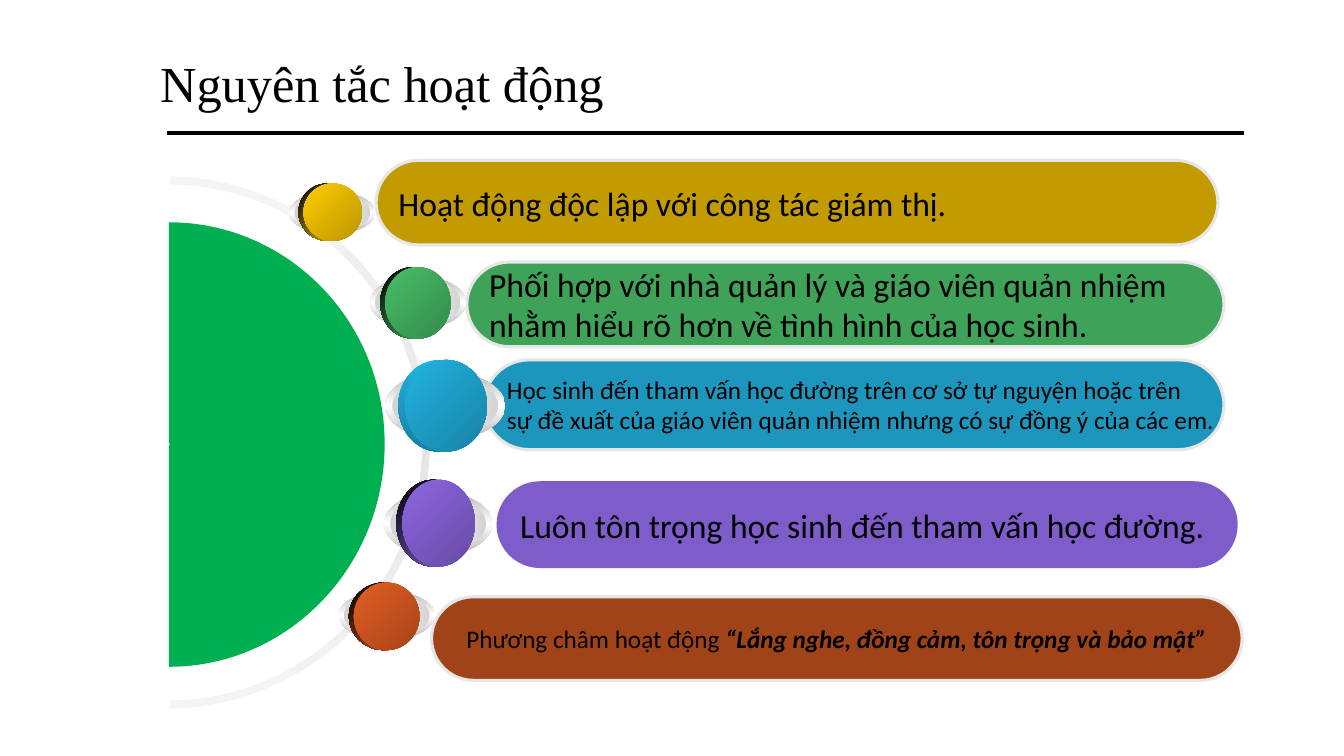
from dataclasses import dataclass

import pptx
import pptx.dml.color
import pptx.enum.shapes
import pptx.enum.text
import pptx.oxml
import pptx.oxml.ns
import pptx.util

EMU_PER_PX = 9144  # 100 px to the inch
NAMESPACE = pptx.oxml.ns.nsdecls("a")
SHAPE = pptx.enum.shapes.MSO_SHAPE
ALIGN = pptx.enum.text.PP_ALIGN
COLOURS = {
    "text": "000000", "edge": "E7E6E6", "disc": "00B050", "arc": "F4F4F4", "white": "FFFFFF",
    "gold": "C29B00", "green": "3EA358", "blue": "1C96BC",
    "purple": "7E5CC9", "rust": "A14319",
    "gold_light": "FFCC00", "green_light": "48BE67", "blue_light": "21B3E1",
    "purple_light": "8D67E1", "rust_light": "E35E23",
}


@dataclass(frozen=True)
class Box:
    left: int
    top: int
    width: int
    height: int


@dataclass(frozen=True)
class Stop:
    colour: str
    shade: int = 100


@dataclass(frozen=True)
class Outline:
    """Shape turned by 90 degrees; each step holds 1 point for a line, 3 for a curve."""
    box: Box
    start: tuple[int, int]
    steps: tuple[tuple[tuple[int, int], ...], ...]
    stops: tuple[Stop, ...]


@dataclass(frozen=True)
class Bar:
    box: Box
    colour: str
    lines: tuple[str, ...]
    size: int = 24
    edge: str = "edge"
    motto: str = ""


@dataclass(frozen=True)
class Ball:
    ring: Box
    top: int
    height: int
    back_width: int
    face_width: int
    colour: str
    back: tuple[Stop, ...] = ()
    back_angle: int = 45


OUTLINES = (
    Outline(Box(-98, 178, 528, 522), (8, 258), (
        ((10, 119), (124, 8), (264, 8)), ((404, 8), (518, 119), (520, 258)),
        ((528, 258),),
        ((525, 115), (408, 1), (264, 1)), ((120, 1), (2, 115), (0, 258)),
    ), (Stop("arc"), Stop("edge"), Stop("arc"))),
    Outline(Box(-54, 226, 441, 430), (222, 214), (
        ((222, 214), (221, 213), (220, 213)), ((220, 213), (219, 214), (219, 214)),
        ((0, 214),),
        ((0, 96), (98, 0), (220, 0)), ((342, 0), (441, 96), (441, 214)),
    ), (Stop("disc"),)),
)
BARS = (
    Bar(Box(428, 592, 804, 83), "rust", ("Phương châm hoạt động ",), size=18,
        motto="“Lắng nghe, đồng cảm, tôn trọng và bảo mật”"),
    Bar(Box(480, 357, 734, 89), "blue",
        ("Học sinh đến tham vấn học đường trên cơ sở tự nguyện hoặc trên",
         "sự đề xuất của giáo viên quản nhiệm nhưng có sự đồng ý của các em."), size=18),
    Bar(Box(463, 260, 751, 84), "green",
        ("Phối hợp với nhà quản lý và giáo viên quản nhiệm",
         "nhằm hiểu rõ hơn về tình hình của học sinh.")),
    Bar(Box(373, 159, 835, 84), "gold", ("Hoạt động độc lập với công tác giám thị.",)),
)
FRONT_BAR = Bar(Box(494, 479, 732, 83), "purple",
                ("Luôn tôn trọng học sinh đến tham vấn học đường.",), edge="purple")
BALLS = (
    Ball(Box(287, 190, 85, 42), 182, 57, 58, 58, "gold"),
    Ball(Box(367, 274, 95, 52), 265, 71, 65, 65, "green"),
    Ball(Box(382, 369, 119, 67), 357, 91, 81, 81, "blue",
         (Stop("blue_light"), Stop("blue_light", 47)), 90),
    Ball(Box(381, 488, 107, 63), 476, 86, 73, 72, "purple"),
    Ball(Box(336, 586, 95, 49), 578, 67, 69, 65, "rust"),
)


def px(length: int) -> pptx.util.Emu:
    return pptx.util.Emu(length * EMU_PER_PX)


def rgb(name: str) -> pptx.dml.color.RGBColor:
    return pptx.dml.color.RGBColor.from_string(COLOURS[name])


def place(box: Box) -> tuple[pptx.util.Emu, ...]:
    return px(box.left), px(box.top), px(box.width), px(box.height)


def fill_shape(shape, stops: tuple[Stop, ...], angle: int = 0) -> None:
    """Fill with one colour, or with an even gradient turned clockwise by angle."""
    shape.shadow.inherit = False
    shape.line.fill.background()
    if len(stops) == 1:
        shape.fill.solid()
        shape.fill.fore_color.rgb = rgb(stops[0].colour)
        return
    shape.fill.gradient()
    shape.fill.gradient_angle = -angle % 360
    stop_list = next(shape.element.spPr.iter(pptx.oxml.ns.qn("a:gsLst")))
    for default_stop in list(stop_list):
        stop_list.remove(default_stop)
    for index, stop in enumerate(stops):
        position = 100000 * index // (len(stops) - 1)
        shade = f'<a:shade val="{stop.shade * 1000}"/>' if stop.shade < 100 else ""
        stop_list.append(pptx.oxml.parse_xml(
            f'<a:gs {NAMESPACE} pos="{position}">'
            f'<a:srgbClr val="{COLOURS[stop.colour]}">{shade}</a:srgbClr></a:gs>'))


def add_span(para, text: str, *, size: int, font: str = "Calibri", strong: bool = False) -> None:
    span = para.add_run()
    span.text = text
    span.font.name = font
    span.font.size = pptx.util.Pt(size)
    span.font.color.rgb = rgb("text")
    if strong:
        span.font.bold = span.font.italic = True


def point_xml(point: tuple[int, int]) -> str:
    return f'<a:pt x="{px(point[0])}" y="{px(point[1])}"/>'


def add_outline(page, outline: Outline) -> None:
    left, top, width, height = place(outline.box)
    builder = page.shapes.build_freeform(left, top)
    builder.add_line_segments([(left + width, top), (left + width, top + height)])
    shape = builder.convert_to_shape()
    shape.rotation = 90
    tags = {1: "lnTo", 3: "cubicBezTo"}
    steps = "".join(
        f'<a:{tags[len(step)]}>{"".join(map(point_xml, step))}</a:{tags[len(step)]}>'
        for step in outline.steps)
    old = next(shape.element.spPr.iter(pptx.oxml.ns.qn("a:pathLst")))
    old.getparent().replace(old, pptx.oxml.parse_xml(
        f'<a:pathLst {NAMESPACE}><a:path w="{width}" h="{height}">'
        f'<a:moveTo>{point_xml(outline.start)}</a:moveTo>{steps}<a:close/>'
        f'</a:path></a:pathLst>'))
    fill_shape(shape, outline.stops)


def add_bar(page, bar: Bar) -> None:
    shape = page.shapes.add_shape(SHAPE.ROUNDED_RECTANGLE, *place(bar.box))
    shape.adjustments[0] = 0.5
    fill_shape(shape, (Stop(bar.colour),))
    shape.line.color.rgb = rgb(bar.edge)
    shape.line.width = pptx.util.Pt(2.25)
    frame = shape.text_frame
    frame.word_wrap = False
    frame.vertical_anchor = pptx.enum.text.MSO_ANCHOR.MIDDLE
    for index, line in enumerate(bar.lines):
        para = frame.add_paragraph() if index else frame.paragraphs[0]
        para.alignment = ALIGN.CENTER if bar.motto else ALIGN.LEFT
        add_span(para, line, size=bar.size)
    if bar.motto:
        add_span(para, bar.motto, size=bar.size, strong=True)


def add_ball(page, ball: Ball) -> None:
    """Draw two silver rings, then the dark back and the lit face of the ball."""
    ring = ball.ring
    inset, drop = round(ring.width * 0.056), round(ring.height * 0.058)
    inner = Box(ring.left + inset, ring.top + drop,
                ring.width - 2 * inset, ring.height - 2 * drop)
    back = Box(ring.left + round(ring.width * 0.108), ball.top, ball.back_width, ball.height)
    face = Box(back.left + inset, ball.top, ball.face_width, ball.height)
    light = f"{ball.colour}_light"
    group = page.shapes.add_group_shape()
    for box, stops, angle in (
        (ring, (Stop("white", 47), Stop("white"), Stop("white", 47)), 90),
        (inner, (Stop("white", 64), Stop("white"), Stop("white", 64)), 0),
        (back, ball.back or (Stop("text"), Stop(light)), ball.back_angle),
        (face, (Stop(light), Stop(light, 49)), 45),
    ):
        fill_shape(group.shapes.add_shape(SHAPE.OVAL, *place(box)), stops, angle)


def add_title(page) -> None:
    frame = page.shapes.add_textbox(*place(Box(149, 53, 1124, 66))).text_frame
    frame.word_wrap = True
    frame.vertical_anchor = pptx.enum.text.MSO_ANCHOR.MIDDLE
    frame.paragraphs[0].line_spacing = 0.9
    add_span(frame.paragraphs[0], "Nguyên tắc hoạt động", size=36, font="Times New Roman")


def add_rule(page) -> None:
    rule = page.shapes.add_connector(
        pptx.enum.shapes.MSO_CONNECTOR.STRAIGHT, px(166), px(132), px(1234), px(132))
    rule.line.color.rgb = rgb("text")
    rule.line.width = pptx.util.Pt(3)
    rule.element.spPr.append(pptx.oxml.parse_xml(f"<a:effectLst {NAMESPACE}/>"))


def main() -> None:
    deck = pptx.Presentation()
    deck.slide_width, deck.slide_height = px(1333), px(750)
    page = deck.slides.add_slide(deck.slide_layouts[6])
    add_title(page)
    for outline in OUTLINES:
        add_outline(page, outline)
    for bar in BARS:
        add_bar(page, bar)
    for ball in BALLS:
        add_ball(page, ball)
    add_rule(page)
    add_bar(page, FRONT_BAR)
    deck.save("out.pptx")


if __name__ == "__main__":
    main()
